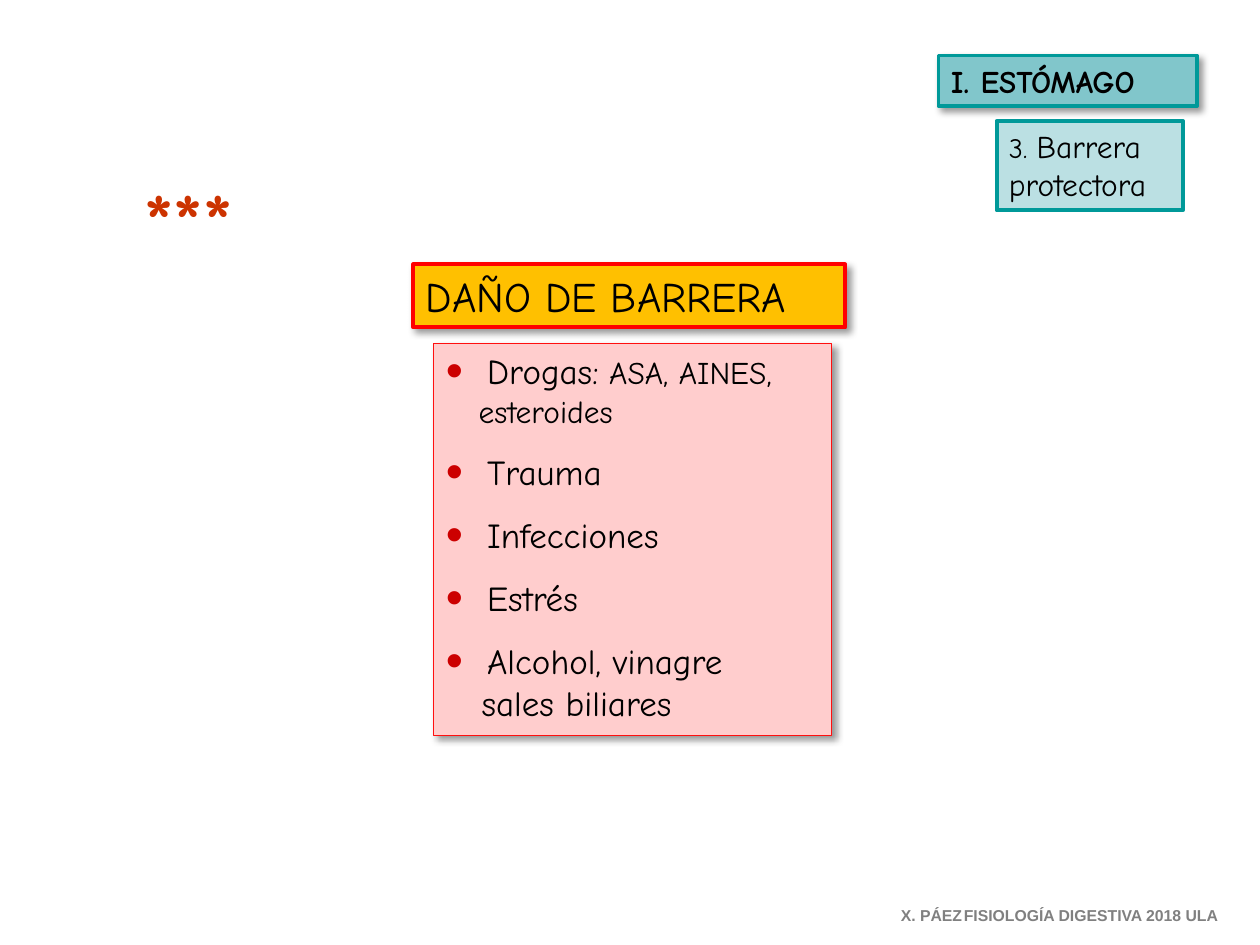
"""Build the slide on damage to the gastric barrier."""
from dataclasses import dataclass
from typing import Optional

from lxml import etree
from pptx import Presentation
from pptx import util as u
from pptx.dml.color import RGBColor
from pptx.enum import shapes, text
from pptx.oxml import ns

BLACK = RGBColor(0x00, 0x00, 0x00)
GRAY = RGBColor(0x80, 0x80, 0x80)
AMBER = RGBColor(0xFF, 0xC0, 0x00)
RED = RGBColor(0xFF, 0x00, 0x00)
BRIGHT_RED = RGBColor(0xFF, 0x0F, 0x0F)
BULLET_RED = RGBColor(0xCC, 0x00, 0x00)
ORANGE_RED = RGBColor(0xCC, 0x33, 0x00)
PINK = RGBColor(0xFF, 0xCD, 0xCD)
TEAL = RGBColor(0x00, 0x99, 0x99)
AQUA = RGBColor(0x81, 0xC6, 0xCB)
PALE_AQUA = RGBColor(0xBB, 0xE0, 0xE3)


@dataclass
class Span:
    words: str
    size: float
    color: RGBColor = BLACK
    bold: bool = False
    font: str = "Comic Neue"
    shadow: bool = False


@dataclass
class Para:
    spans: list[Span]
    bullet: bool = False
    margin: float = 0
    before: float = 0
    tab: Optional[float] = None


@dataclass
class Box:
    left: float
    top: float
    width: float
    height: float
    paras: list[Para]
    fill: Optional[RGBColor] = None
    line: Optional[RGBColor] = None
    weight: float = 2.25
    shadow: bool = False


def add_node(parent, tag: str, **values):
    """Append a drawing element with the given attributes."""
    return etree.SubElement(parent, ns.qn(tag), {k: str(v) for k, v in values.items()})


def add_shadow(effects, blur: float, distance: float, alpha: int) -> None:
    """Put a black shadow falling to the lower right in an effect list."""
    outer = add_node(effects, "a:outerShdw", blurRad=u.Pt(blur), dist=u.Pt(distance),
                     dir=45 * 60000, algn="tl", rotWithShape=0)
    color = add_node(outer, "a:srgbClr", val=BLACK)
    add_node(color, "a:alpha", val=alpha * 1000)


def write_span(para, span: Span) -> None:
    """Add one formatted run to a paragraph."""
    run = para.add_run()
    run.text = span.words
    formats = {"name": span.font, "size": u.Pt(span.size), "bold": span.bold}
    for name, value in formats.items():
        setattr(run.font, name, value)
    run.font.color.rgb = span.color
    if span.shadow:
        effects = etree.Element(ns.qn("a:effectLst"))
        run.font._element.find(ns.qn("a:solidFill")).addnext(effects)
        add_shadow(effects, 0, 3, 100)


def write_para(para, content: Para) -> None:
    """Format a paragraph and write its runs."""
    formats = {"alignment": text.PP_ALIGN.LEFT, "space_before": u.Pt(content.before)}
    for name, value in formats.items():
        setattr(para, name, value)
    props = para._p.get_or_add_pPr()
    props.set("marL", str(u.Cm(content.margin)))
    props.set("indent", str(-u.Cm(content.margin) if content.bullet else 0))
    if content.bullet:
        add_node(add_node(props, "a:buClr"), "a:srgbClr", val=BULLET_RED)
        add_node(props, "a:buSzPct", val=140000)
        add_node(props, "a:buFont", typeface="Arial")
        add_node(props, "a:buChar", char="•")
    if content.tab:
        add_node(add_node(props, "a:tabLst"), "a:tab", pos=u.Cm(content.tab), algn="l")
    for span in content.spans:
        write_span(para, span)


def draw_box(shape, box: Box) -> None:
    """Place, colour and fill a shape with text."""
    for name in ("left", "top", "width", "height"):
        setattr(shape, name, u.Cm(getattr(box, name)))
    if box.fill is not None:
        shape.fill.solid()
        shape.fill.fore_color.rgb = box.fill
    if box.line is not None:
        shape.line.color.rgb = box.line
        shape.line.width = u.Pt(box.weight)
    shape.shadow.inherit = False
    if box.shadow:
        add_shadow(shape._element.spPr.find(ns.qn("a:effectLst")), 4, 3, 40)
    frame = shape.text_frame
    formats = {"word_wrap": True, "auto_size": text.MSO_AUTO_SIZE.NONE,
               "vertical_anchor": text.MSO_ANCHOR.TOP}
    for name, value in formats.items():
        setattr(frame, name, value)
    for number, content in enumerate(box.paras):
        write_para(frame.add_paragraph() if number else frame.paragraphs[0], content)


def cause(*spans: Span, before: float = 12) -> Para:
    """Make a bulleted cause of damage."""
    return Para(list(spans), bullet=True, margin=0.83, before=before)


TITLE = Box(8.33, 5.33, 8.71, 1.27, [Para([Span("DAÑO DE BARRERA", 24)])],
            AMBER, RED, shadow=True)
CAUSES = Box(8.74, 6.93, 8.03, 7.9, [
    cause(Span("Drogas:", 20), Span(" ASA, AINES,", 18), before=0),
    Para([Span("esteroides", 18)], margin=0.66),
    *(cause(Span(name, 20))
      for name in ("Trauma", "Infecciones", "Estrés", "Alcohol, vinagre")),
    Para([Span("sales biliares", 20)], margin=0.72),
], PINK, BRIGHT_RED, 0.75, shadow=True)
STARS = Box(2.67, 3.33, 2.97, 2.11,
            [Para([Span("***", 44, ORANGE_RED, bold=True, shadow=True)])])
TOPIC = Box(20.09, 2.44, 3.76, 1.8,
            [Para([Span("3. ", 16), Span("Barrera", 18)]), Para([Span("protectora", 18)])],
            PALE_AQUA, TEAL)
CHAPTER = Box(18.92, 1.12, 5.21, 1.02, [Para([Span("I. ESTÓMAGO", 18, bold=True)])],
              AQUA, TEAL, shadow=True)
CREDIT = Box(17.91, 18.14, 7.26, 0.64, [
    Para([Span("X. PÁEZ\tFISIOLOGÍA DIGESTIVA 2018 ULA", 9, GRAY, True, "Arial")], tab=1.5)])


def main() -> None:
    """Create and save the deck."""
    deck = Presentation()
    deck.slide_width, deck.slide_height = u.Cm(25.4), u.Cm(19.05)
    page = deck.slides.add_slide(deck.slide_layouts[5])
    draw_box(page.shapes.title, TITLE)
    for box in (CAUSES, STARS, TOPIC, CHAPTER, CREDIT):
        if box.fill is None:
            shape = page.shapes.add_textbox(0, 0, 0, 0)
        else:
            shape = page.shapes.add_shape(shapes.MSO_SHAPE.RECTANGLE, 0, 0, 0, 0)
        draw_box(shape, box)
    deck.save("out.pptx")


if __name__ == "__main__":
    main()
